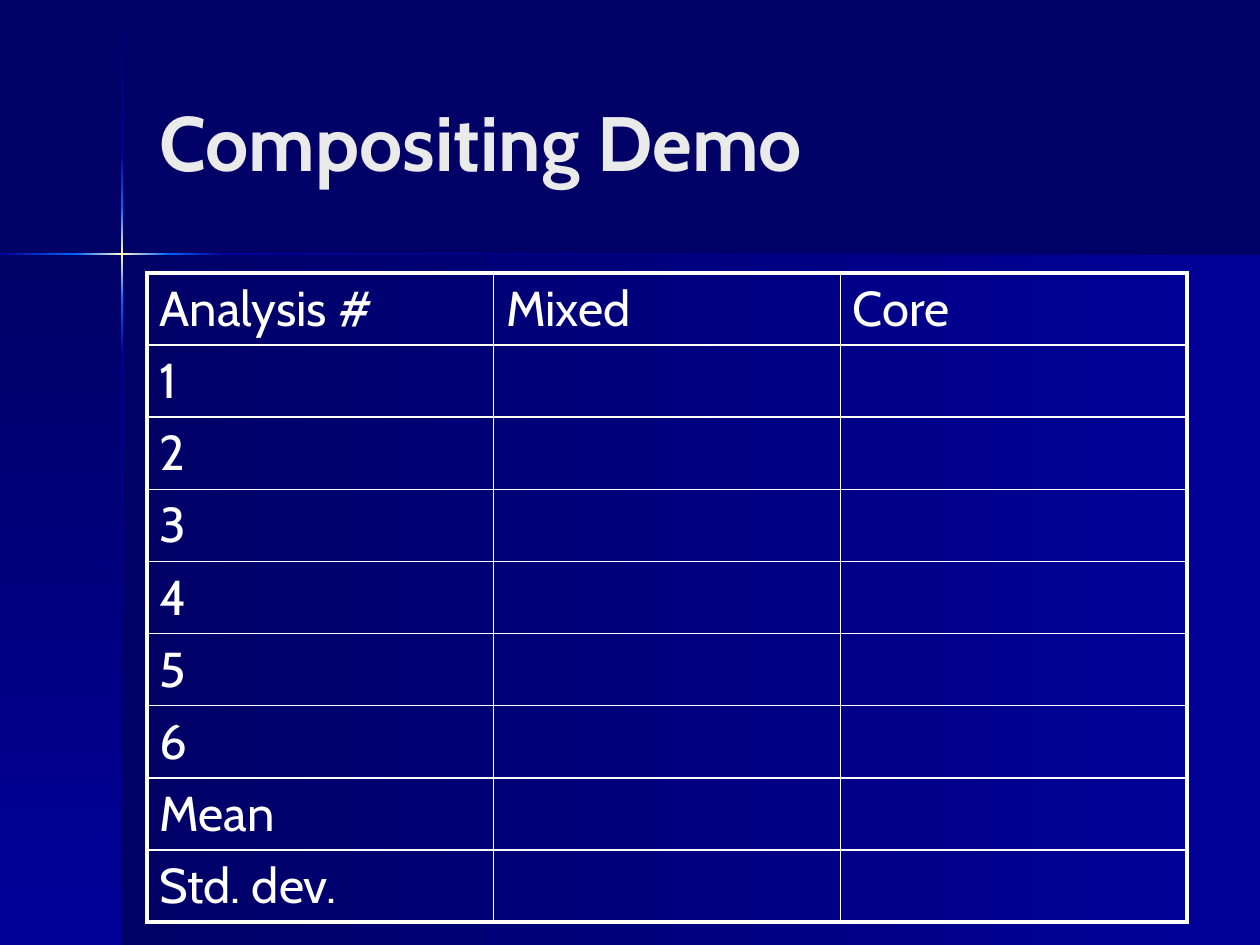
from dataclasses import dataclass
from itertools import pairwise

from lxml.etree import SubElement
from pptx import Presentation
from pptx.dml.color import RGBColor as RGB
from pptx.enum.shapes import MSO_SHAPE as Kind
from pptx.enum.text import MSO_ANCHOR as Anchor, MSO_AUTO_SIZE as Fit, PP_ALIGN as Align
from pptx.oxml import parse_xml
from pptx.oxml.ns import nsdecls, qn
from pptx.util import Pt

SCALE = 914400 / 126


@dataclass(frozen=True)
class Theme:
    """Colours, font, type sizes and line widths."""
    night: str = "000066"
    royal: str = "000099"
    glow: str = "0066FF"
    spark: str = "FFFFCC"
    title: str = "EAEAEA"
    text: str = "FFFFFF"
    font: str = "Cabin"
    head: int = 44
    body: int = 28
    thin: float = 1
    thick: float = 2.25


LOOK = Theme()


def px(*nums):
    """Turn pixel lengths into EMU."""
    return [round(n * SCALE) for n in nums]


def put(item, **vals):
    """Set attributes from a dict of values."""
    for key, val in vals.items():
        setattr(item, key, val)


def style(para, size, color, bold=False):
    """Format one paragraph."""
    para.alignment = Align.LEFT
    put(para.font, name=LOOK.font, size=Pt(size), bold=bold)
    para.font.color.rgb = RGB.from_string(color)


def panel(slide, box, hues, angle=0):
    """Draw a rectangle with evenly spaced gradient stops."""
    shape = slide.shapes.add_shape(Kind.RECTANGLE, *px(*box))
    shape.shadow.inherit = False
    shape.line.fill.background()
    shape.fill.gradient()
    shape.fill.gradient_angle = -angle % 360
    stops = shape._element.spPr.find(".//" + qn("a:gsLst"))
    stops.clear()
    for i, hue in enumerate(hues):
        pos = 100000 * i // (len(hues) - 1)
        stop = SubElement(stops, qn("a:gs"), pos=str(pos))
        SubElement(stop, qn("a:srgbClr"), val=hue)


def backdrop(slide):
    """Draw the two panels and the crossing beams of light."""
    t = LOOK
    panel(slide, (122, 255, 1138, 690), (t.night, t.royal))
    panel(slide, (0, 255, 122, 690), (t.night, t.royal), 90)
    beam = [(t.night, t.royal), (t.royal, t.glow), (t.glow, t.spark, t.glow),
            (t.glow, t.royal), (t.royal, t.night)]
    for (a, b), hues in zip(pairwise((1, 152, 208, 300, 355, 945)), beam):
        panel(slide, (121, a, 2, b - a), hues, 90)
    for (a, b), hues in zip(pairwise((0, 76, 168, 223, 1260)), beam[1:]):
        panel(slide, (a, 253, b - a, 2), hues)


def heading(slide, text):
    """Fill the title placeholder and lift it above the backdrop."""
    title = slide.shapes.title
    slide.shapes._spTree.append(title._element)
    put(title, **dict(zip(("left", "top", "width", "height"), px(147, 42, 1040, 198))))
    frame = title.text_frame
    put(frame, text=text, word_wrap=True, auto_size=Fit.NONE, vertical_anchor=Anchor.MIDDLE)
    style(frame.paragraphs[0], LOOK.head, LOOK.title, True)


def border(cell, outer):
    """Rule a cell, thick on its outer sides."""
    props = cell._tc.get_or_add_tcPr()
    for i, side in enumerate("LRTB"):
        wide = Pt(LOOK.thick if outer[side] else LOOK.thin)
        props.insert(i, parse_xml(
            f'<a:ln{side} {nsdecls("a")} w="{wide}"><a:solidFill>'
            f'<a:srgbClr val="{LOOK.text}"/></a:solidFill></a:ln{side}>'))


def grid(slide, box, heads, names):
    """Add a table with header cells and row names."""
    rows, cols = len(names) + 1, len(heads)
    table = slide.shapes.add_table(rows, cols, *px(*box)).table
    put(table, first_row=False, horz_banding=False)
    words = [heads] + [[name] + [""] * (cols - 1) for name in names]
    for r, row in enumerate(words):
        for c, word in enumerate(row):
            cell = table.cell(r, c)
            cell.text = word
            cell.fill.background()
            style(cell.text_frame.paragraphs[0], LOOK.body, LOOK.text)
            border(cell, dict(L=c == 0, R=c == cols - 1, T=r == 0, B=r == rows - 1))


def main():
    """Build and save the slide."""
    deck = Presentation()
    put(deck, **dict(zip(("slide_width", "slide_height"), px(1260, 945))))
    slide = deck.slides.add_slide(deck.slide_layouts[5])
    fill = slide.background.fill
    fill.solid()
    fill.fore_color.rgb = RGB.from_string(LOOK.night)
    backdrop(slide)
    heading(slide, "Compositing Demo")
    grid(slide, (147, 273, 1040, 648), ["Analysis #", "Mixed", "Core"],
         [*"123456", "Mean", "Std. dev."])
    deck.save("out.pptx")


if __name__ == "__main__":
    main()
